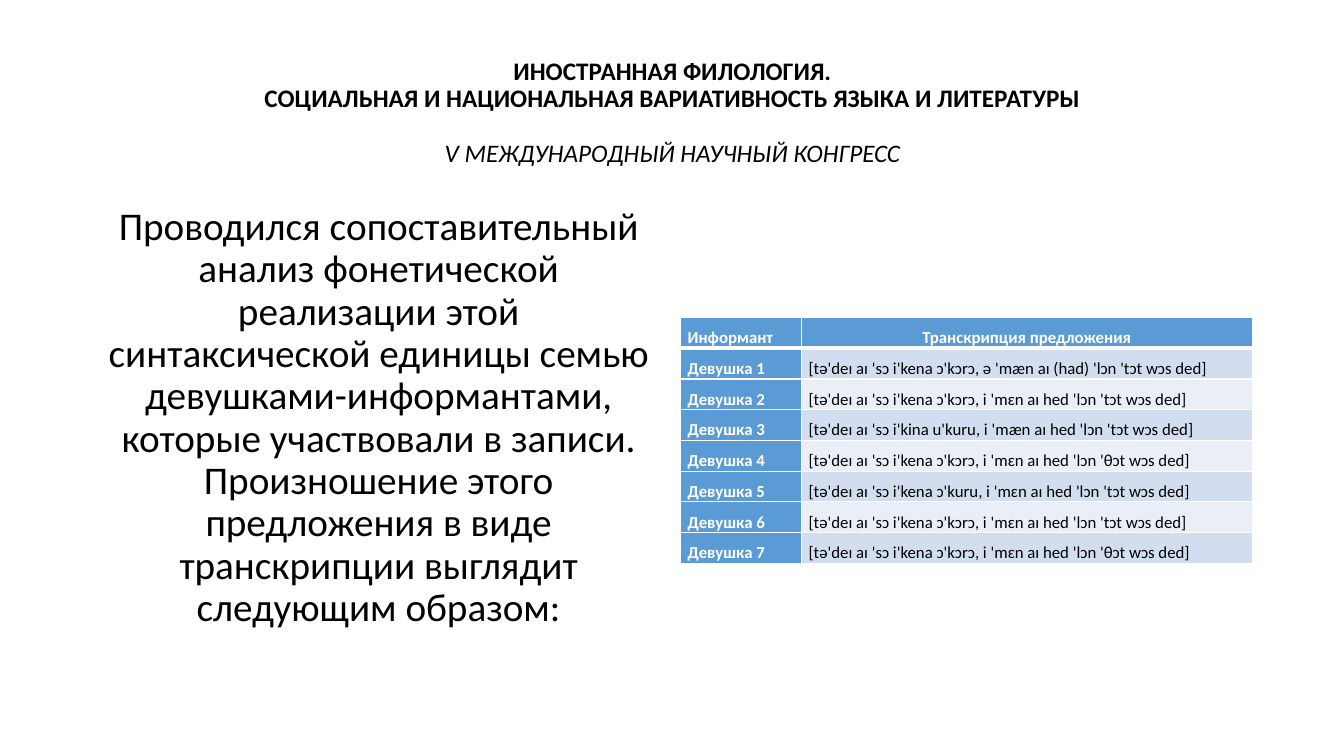
import pptx
import pptx.dml.color
import pptx.enum.text
import pptx.oxml
import pptx.oxml.ns
import pptx.util

ALIGN = pptx.enum.text.PP_ALIGN
ANCHOR = pptx.enum.text.MSO_ANCHOR
FONT = "Calibri"
BLACK, WHITE, BLUE = "000000", "FFFFFF", "5B9BD5"
BANDS = ("D2DEEF", "EAEFF7")

# Page grid: two equal columns with a gutter between them
WIDTH, HEIGHT = 13.33, 7.5
MARGIN, COLUMN, GUTTER = 0.92, 5.67, 0.16
RIGHT_COLUMN = MARGIN + COLUMN + GUTTER
CONTENT = 2 * COLUMN + GUTTER
TABLE_COLUMNS = (1.2, COLUMN - 1.2)
ROW = 0.305

CONGRESS = (
    "ИНОСТРАННАЯ ФИЛОЛОГИЯ.",
    "СОЦИАЛЬНАЯ И НАЦИОНАЛЬНАЯ ВАРИАТИВНОСТЬ ЯЗЫКА И ЛИТЕРАТУРЫ",
    "V МЕЖДУНАРОДНЫЙ НАУЧНЫЙ КОНГРЕСС",
)
ANALYSIS = (
    "Проводился сопоставительный анализ фонетической реализации этой "
    "синтаксической единицы семью девушками-информантами, которые участвовали "
    "в записи. Произношение этого предложения в виде транскрипции выглядит "
    "следующим образом:"
)
HEADINGS = ("Информант", "Транскрипция предложения")
TRANSCRIPTIONS = (
    "[tə'deɪ aɪ 'sɔ i'kena ɔ'kɔrɔ, ə 'mæn aɪ (had) 'lɔn 'tɔt wɔs ded]",
    "[tə'deɪ aɪ 'sɔ i'kena ɔ'kɔrɔ, i 'mɛn aɪ hed 'lɔn 'tɔt wɔs ded]",
    "[tə'deɪ aɪ 'sɔ i'kina u'kuru, i 'mæn aɪ hed 'lɔn 'tɔt wɔs ded]",
    "[tə'deɪ aɪ 'sɔ i'kena ɔ'kɔrɔ, i 'mɛn aɪ hed 'lɔn 'θɔt wɔs ded]",
    "[tə'deɪ aɪ 'sɔ i'kena ɔ'kuru, i 'mɛn aɪ hed 'lɔn 'tɔt wɔs ded]",
    "[tə'deɪ aɪ 'sɔ i'kena ɔ'kɔrɔ, i 'mɛn aɪ hed 'lɔn 'tɔt wɔs ded]",
    "[tə'deɪ aɪ 'sɔ i'kena ɔ'kɔrɔ, i 'mɛn aɪ hed 'lɔn 'θɔt wɔs ded]",
)


def inches(*lengths):
    return [pptx.util.Inches(length) for length in lengths]


def rgb(color):
    return pptx.dml.color.RGBColor.from_string(color)


def style(paragraph, size, color=BLACK, bold=False, align=ALIGN.CENTER, spacing=0.9):
    paragraph.alignment = align
    paragraph.line_spacing = spacing
    font = paragraph.font
    font.name, font.size, font.bold = FONT, pptx.util.Pt(size), bold
    font.color.rgb = rgb(color)


def add_text(slide, box, lines, size, bold=False, anchor=ANCHOR.TOP):
    frame = slide.shapes.add_textbox(*inches(*box)).text_frame
    frame.word_wrap = True
    frame.vertical_anchor = anchor
    frame.text = "\n".join(lines)
    for paragraph in frame.paragraphs:
        style(paragraph, size, bold=bold)
    return frame.paragraphs


def add_borders(cell, bottom):
    properties = cell._tc.get_or_add_tcPr()
    sides = (("lnL", 1), ("lnR", 1), ("lnT", 1), ("lnB", bottom))
    for position, (side, points) in enumerate(sides):
        properties.insert(position, pptx.oxml.parse_xml(
            f'<a:{side} {pptx.oxml.ns.nsdecls("a")} w="{pptx.util.Pt(points)}">'
            f'<a:solidFill><a:srgbClr val="{WHITE}"/></a:solidFill></a:{side}>'))


def fill_cell(cell, text, fill, color, bold, align=ALIGN.LEFT, bottom=1):
    cell.margin_left = cell.margin_right = pptx.util.Inches(0.07)
    cell.margin_top = cell.margin_bottom = 0
    cell.text = text
    style(cell.text_frame.paragraphs[0], 12, color, bold, align, 1.5)
    cell.fill.solid()
    cell.fill.fore_color.rgb = rgb(fill)
    add_borders(cell, bottom)


def add_transcriptions(slide):
    rows = len(TRANSCRIPTIONS) + 1
    table = slide.shapes.add_table(
        rows, 2, *inches(RIGHT_COLUMN, 3.15, COLUMN, rows * ROW)).table
    for column, width in zip(table.columns, TABLE_COLUMNS):
        column.width = pptx.util.Inches(width)

    # Heading row with a heavier rule below
    for column, (heading, align) in enumerate(zip(HEADINGS, (ALIGN.JUSTIFY, ALIGN.CENTER))):
        fill_cell(table.cell(0, column), heading, BLUE, WHITE, True, align, bottom=3)

    # Speakers and their banded transcriptions
    for number, transcription in enumerate(TRANSCRIPTIONS, 1):
        fill_cell(table.cell(number, 0), f"Девушка {number}", BLUE, WHITE, True)
        fill_cell(table.cell(number, 1), transcription, BANDS[(number - 1) % 2], BLACK, False)


def main():
    deck = pptx.Presentation()
    deck.slide_width, deck.slide_height = inches(WIDTH, HEIGHT)
    slide = deck.slides.add_slide(deck.slide_layouts[6])

    # Congress title, with its subtitle set apart in italics
    title = add_text(slide, (MARGIN, 0.4, CONTENT, 1.45), CONGRESS, 18, True, ANCHOR.MIDDLE)
    subtitle = title[-1]
    subtitle.space_before = pptx.util.Pt(20)
    subtitle.font.bold, subtitle.font.italic = False, True

    # Explanation on the left, table on the right
    add_text(slide, (MARGIN, 2, COLUMN, 4.76), [ANALYSIS], 28)
    add_transcriptions(slide)

    deck.save("out.pptx")


if __name__ == "__main__":
    main()
